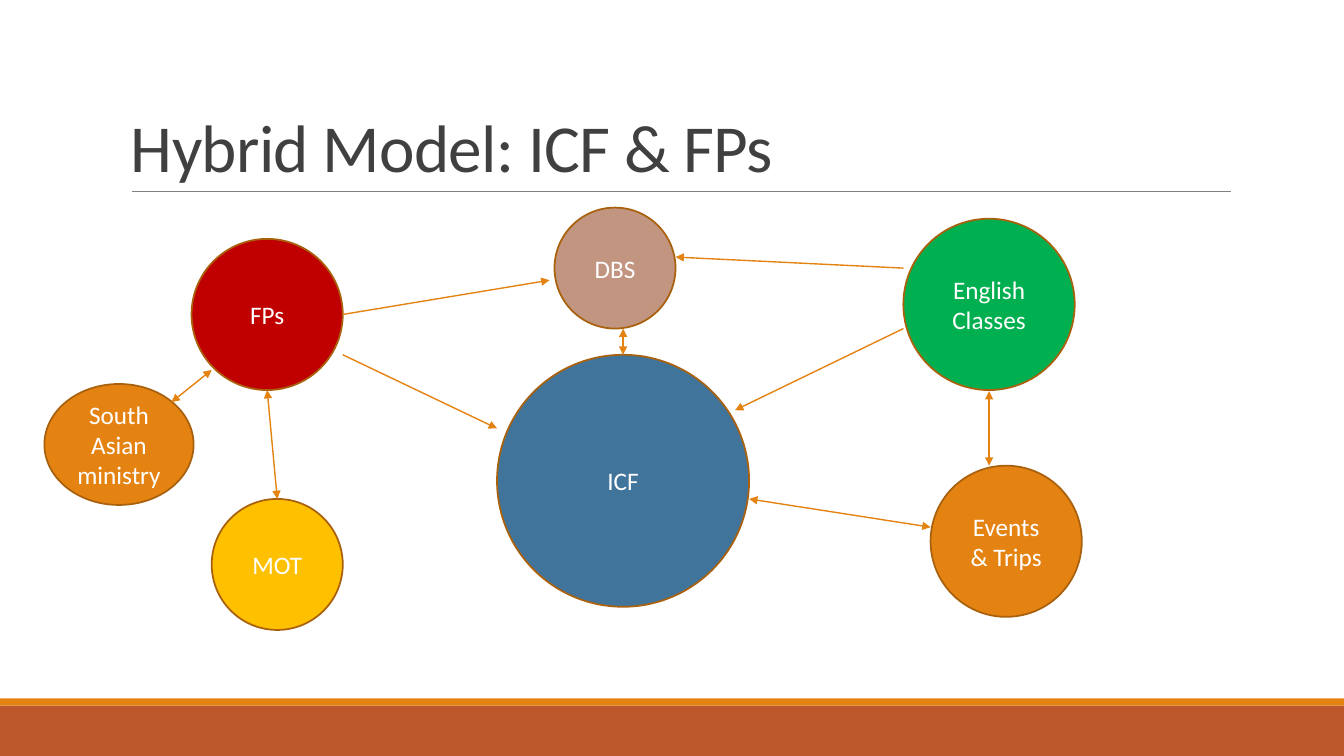
from dataclasses import dataclass

from lxml.etree import SubElement
from pptx import Presentation
from pptx.dml.color import RGBColor
from pptx.enum.shapes import MSO_CONNECTOR, MSO_SHAPE
from pptx.enum.text import MSO_ANCHOR, PP_ALIGN
from pptx.oxml.ns import qn
from pptx.slide import Slide
from pptx.util import Emu, Pt

PX = 9144


@dataclass(frozen=True)
class Theme:
    font: str = "Calibri"
    title_size: float = 48
    label_size: float = 18
    outline_width: float = 1.25
    arrow_width: float = 1
    rule_width: float = 0.5
    title: str = "404040"
    label: str = "FFFFFF"
    outline: str = "A9610D"
    accent: str = "E48312"
    footer: str = "BD582C"
    rule: str = "808080"
    blue: str = "40749B"
    green: str = "00B050"
    red: str = "C00000"
    yellow: str = "FFC000"
    tan: str = "C29580"


@dataclass(frozen=True)
class Band:
    top: int
    height: int
    fill: str


@dataclass(frozen=True)
class Bubble:
    text: str
    left: int
    top: int
    width: int
    height: int
    fill: str


@dataclass(frozen=True)
class Arrow:
    x1: int
    y1: int
    x2: int
    y2: int
    both: bool = False


THEME = Theme()
WIDTH, HEIGHT = 1333, 750

BANDS = [Band(700, 50, THEME.footer), Band(693, 7, THEME.accent)]

BUBBLES = [
    Bubble("ICF", 493, 352, 250, 250, THEME.blue),
    Bubble("English\nClasses", 896, 217, 170, 170, THEME.green),
    Bubble("FPs", 190, 237, 150, 150, THEME.red),
    Bubble("Events & Trips", 923, 462, 150, 150, THEME.accent),
    Bubble("MOT", 210, 495, 130, 130, THEME.yellow),
    Bubble("DBS", 550, 206, 120, 120, THEME.tan),
    Bubble("South Asian ministry", 44, 381, 148, 120, THEME.accent),
]

ARROWS = [
    Arrow(340, 352, 493, 425),
    Arrow(340, 312, 545, 278),
    Arrow(896, 326, 729, 407),
    Arrow(743, 495, 923, 523, both=True),
    Arrow(981, 388, 981, 462, both=True),
    Arrow(896, 266, 670, 255),
    Arrow(618, 326, 618, 352, both=True),
    Arrow(265, 387, 275, 495, both=True),
    Arrow(170, 399, 210, 367, both=True),
]


def px(n: int) -> Emu:
    return Emu(n * PX)


def rgb(color: str) -> RGBColor:
    return RGBColor.from_string(color)


def add_band(s: Slide, band: Band) -> None:
    sp = s.shapes.add_shape(MSO_SHAPE.RECTANGLE, 0, px(band.top), px(WIDTH), px(band.height))
    sp.shadow.inherit = False
    sp.fill.solid()
    sp.fill.fore_color.rgb = rgb(band.fill)
    sp.line.fill.background()


def add_title(s: Slide, text: str) -> None:
    tf = s.shapes.add_textbox(px(120), px(31), px(1100), px(159)).text_frame
    tf.word_wrap = True
    tf.vertical_anchor = MSO_ANCHOR.BOTTOM
    p = tf.paragraphs[0]
    p.line_spacing = 0.85
    p.font.name = THEME.font
    p.font.size = Pt(THEME.title_size)
    p.font.color.rgb = rgb(THEME.title)
    r = p.add_run()
    r.text = text
    r.font._element.set("spc", "-50")


def add_bubble(s: Slide, bubble: Bubble) -> None:
    sp = s.shapes.add_shape(
        MSO_SHAPE.OVAL, px(bubble.left), px(bubble.top), px(bubble.width), px(bubble.height)
    )
    sp.shadow.inherit = False
    sp.fill.solid()
    sp.fill.fore_color.rgb = rgb(bubble.fill)
    sp.line.color.rgb = rgb(THEME.outline)
    sp.line.width = Pt(THEME.outline_width)
    tf = sp.text_frame
    tf.word_wrap = True
    tf.vertical_anchor = MSO_ANCHOR.MIDDLE
    tf.text = bubble.text
    for p in tf.paragraphs:
        p.alignment = PP_ALIGN.CENTER
        p.font.name = THEME.font
        p.font.size = Pt(THEME.label_size)
        p.font.color.rgb = rgb(THEME.label)


def add_line(s: Slide, line: Arrow, color: str, width: float, ends: tuple[str, ...] = ()) -> None:
    cxn = s.shapes.add_connector(
        MSO_CONNECTOR.STRAIGHT, px(line.x1), px(line.y1), px(line.x2), px(line.y2)
    )
    cxn.line.color.rgb = rgb(color)
    cxn.line.width = Pt(width)
    ln = cxn.line._get_or_add_ln()
    for end in ends:
        SubElement(ln, qn(f"a:{end}"), type="triangle")
    SubElement(cxn._element.spPr, qn("a:effectLst"))


def main() -> None:
    prs = Presentation()
    prs.slide_width, prs.slide_height = px(WIDTH), px(HEIGHT)
    s = prs.slides.add_slide(prs.slide_layouts[6])
    for band in BANDS:
        add_band(s, band)
    add_line(s, Arrow(131, 190, 1221, 190), THEME.rule, THEME.rule_width)
    add_title(s, "Hybrid Model: ICF & FPs")
    for bubble in BUBBLES:
        add_bubble(s, bubble)
    for arrow in ARROWS:
        ends = ("headEnd", "tailEnd") if arrow.both else ("tailEnd",)
        add_line(s, arrow, THEME.accent, THEME.arrow_width, ends)
    prs.save("out.pptx")


if __name__ == "__main__":
    main()
